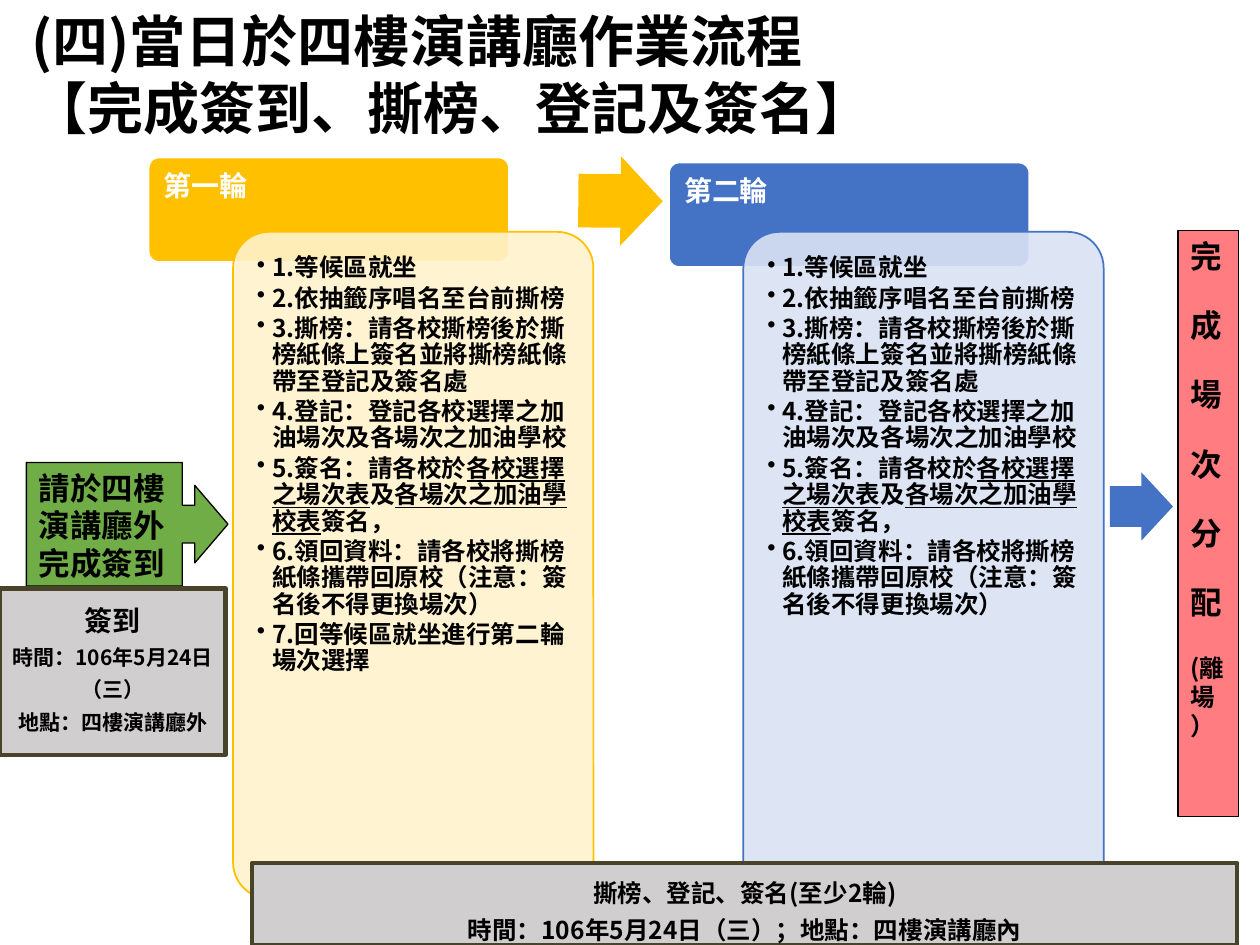
from lxml import etree
from pptx import Presentation
from pptx.dml.color import RGBColor
from pptx.enum.shapes import MSO_SHAPE
from pptx.enum.text import MSO_ANCHOR, MSO_AUTO_SIZE, PP_ALIGN
from pptx.oxml.ns import qn
from pptx.util import Inches, Pt

ROUND = MSO_SHAPE.ROUNDED_RECTANGLE
RECT = MSO_SHAPE.RECTANGLE
ARROW = MSO_SHAPE.RIGHT_ARROW
CALLOUT = MSO_SHAPE.RIGHT_ARROW_CALLOUT
TOP = MSO_ANCHOR.TOP
FIXED = MSO_AUTO_SIZE.NONE
LEFT = PP_ALIGN.LEFT
CENTER = PP_ALIGN.CENTER

BLACK = RGBColor(0, 0, 0)
WHITE = RGBColor(255, 255, 255)
GOLD = RGBColor(0xFF, 0xC0, 0x00)
CREAM = RGBColor(0xFF, 0xF2, 0xCC)
BLUE = RGBColor(0x44, 0x72, 0xC4)
PALE = RGBColor(0xDA, 0xE3, 0xF3)
GREEN = RGBColor(0x70, 0xAD, 0x47)
GRAY = RGBColor(0xD0, 0xCE, 0xCE)
BROWN = RGBColor(0x48, 0x43, 0x29)
PINK = RGBColor(0xFF, 0x7C, 0x80)

STEPS = [
    ["1.等候區就坐"],
    ["2.依抽籤序唱名至台前撕榜"],
    ["3.撕榜：請各校撕榜後於撕榜紙條上簽名並將撕榜紙條帶至登記及簽名處"],
    ["4.登記：登記各校選擇之加油場次及各場次之加油學校"],
    ["5.簽名：請各校於", "各校選擇之場次表", "及", "各場次之加油學校表", "簽名，"],
    ["6.領回資料：請各校將撕榜紙條攜帶回原校（注意：簽名後不得更換場次）"],
]
LAST = ["7.回等候區就坐進行第二輪場次選擇"]


class Deck:
    face = "Noto Sans CJK SC"

    def __init__(self):
        self.prs = Presentation()
        self.prs.slide_width = Inches(10)
        self.prs.slide_height = Inches(7.5)
        self.slide = self.prs.slides.add_slide(self.prs.slide_layouts[5])

    def run(self, para, text, size, color=BLACK, under=False):
        run = para.add_run()
        run.text = text
        font = run.font
        font.size = Pt(size)
        font.bold = True
        font.color.rgb = color
        font.name = self.face
        if under:
            font.underline = True
        ea = etree.SubElement(font._element, qn("a:ea"))
        ea.set("typeface", self.face)

    def frame(self, shape, inset=None):
        frame = shape.text_frame
        frame.word_wrap = True
        frame.auto_size = FIXED
        frame.vertical_anchor = TOP
        if inset:
            (frame.margin_left, frame.margin_top,
             frame.margin_right, frame.margin_bottom) = map(Inches, inset)
        return frame

    def para(self, frame, first, align=LEFT, space=1.0, before=0, after=0):
        para = frame.paragraphs[0] if first else frame.add_paragraph()
        para.alignment = align
        para.line_spacing = space
        para.space_before = Pt(0 if first else before)
        para.space_after = Pt(after)
        return para

    def text(self, shape, lines, **style):
        frame = self.frame(shape)
        for i, (text, size) in enumerate(lines):
            self.run(self.para(frame, i == 0, **style), text, size)

    def title(self, box, lines):
        shape = self.slide.shapes.title
        shape.left, shape.top, shape.width, shape.height = map(Inches, box)
        self.text(shape, [(line, 32) for line in lines])

    def shape(self, kind, box, fill, line=None, width=1, adj=(), alpha=None):
        shape = self.slide.shapes.add_shape(kind, *map(Inches, box))
        shape.shadow.inherit = False
        for i, value in enumerate(adj):
            shape.adjustments[i] = value
        shape.fill.solid()
        shape.fill.fore_color.rgb = fill
        if alpha:
            color = shape._element.spPr.find(qn("a:solidFill"))[0]
            etree.SubElement(color, qn("a:alpha")).set("val", str(alpha * 1000))
        if line is None:
            shape.line.fill.background()
        else:
            shape.line.color.rgb = line
            shape.line.width = Pt(width)
        return shape

    def head(self, x, y, text, fill):
        self.shape(ROUND, (x, y, 2.86, 0.83), fill, WHITE, adj=[0.1])
        box = self.slide.shapes.add_textbox(*map(Inches, (x, y, 2.86, 0.55)))
        frame = self.frame(box, (0.12, 0.12, 0.12, 0.07))
        self.run(self.para(frame, True, space=0.9), text, 16, WHITE)

    def steps(self, x, items, fill, line):
        self.shape(ROUND, (x, 1.84, 2.86, 5.29), fill, line, adj=[0.1], alpha=90)
        box = self.slide.shapes.add_textbox(*map(Inches, (x + 0.08, 1.92, 2.7, 5.12)))
        frame = self.frame(box, [0.11] * 4)
        for i, parts in enumerate(items):
            para = self.para(frame, i == 0, space=0.9, after=2.1)
            para.level = 1
            props = para._p.get_or_add_pPr()
            props.set("marL", str(Inches(0.12)))
            props.set("indent", str(Inches(-0.12)))
            etree.SubElement(props, qn("a:buChar")).set("char", "•")
            for j, text in enumerate(parts):
                self.run(para, text, 14, under=j % 2 == 1)

    def note(self, box, lines):
        shape = self.shape(RECT, box, GRAY, BROWN, 2.5)
        self.text(shape, lines, align=CENTER, space=1.28)


def main():
    deck = Deck()
    deck.title((0.15, 0, 9.51, 1.18),
               ["(四)當日於四樓演講廳作業流程", "【完成簽到、撕榜、登記及簽名】"])

    deck.head(1.18, 1.25, "第一輪", GOLD)
    deck.steps(1.85, STEPS + [LAST], CREAM, GOLD)
    turn = deck.shape(ARROW, (4.59, 1.24, 0.67, 0.71), GOLD, adj=[0.6, 0.5])
    turn.rotation = 0.5
    deck.head(5.31, 1.29, "第二輪", BLUE)
    deck.steps(5.9, STEPS, PALE, BLUE)

    sign = deck.shape(CALLOUT, (0.21, 3.67, 1.6, 0.98), GREEN, BLACK, 0.75,
                      [0.305, 0.314, 0.269, 0.773])
    deck.text(sign, [("請於四樓演講廳外完成簽到", 18)])
    deck.note((0, 4.67, 1.79, 1.32),
              [("簽到", 16), ("時間：106年5月24日（三）", 12), ("地點：四樓演講廳外", 12)])

    done = deck.shape(RECT, (9.35, 1.83, 0.48, 4.65), PINK, BLACK, 0.75)
    deck.text(done, [(char, 18) for char in "完成場次分配"] + [("(離場）", 14)],
              before=18)
    deck.note((2, 6.85, 7.82, 0.65),
              [("撕榜、登記、簽名(至少2輪)", 14),
               ("時間：106年5月24日（三）；地點：四樓演講廳內", 14)])
    deck.shape(ARROW, (8.81, 3.75, 0.5, 0.54), BLUE, adj=[0.6, 0.5])
    deck.prs.save("out.pptx")


if __name__ == "__main__":
    main()
